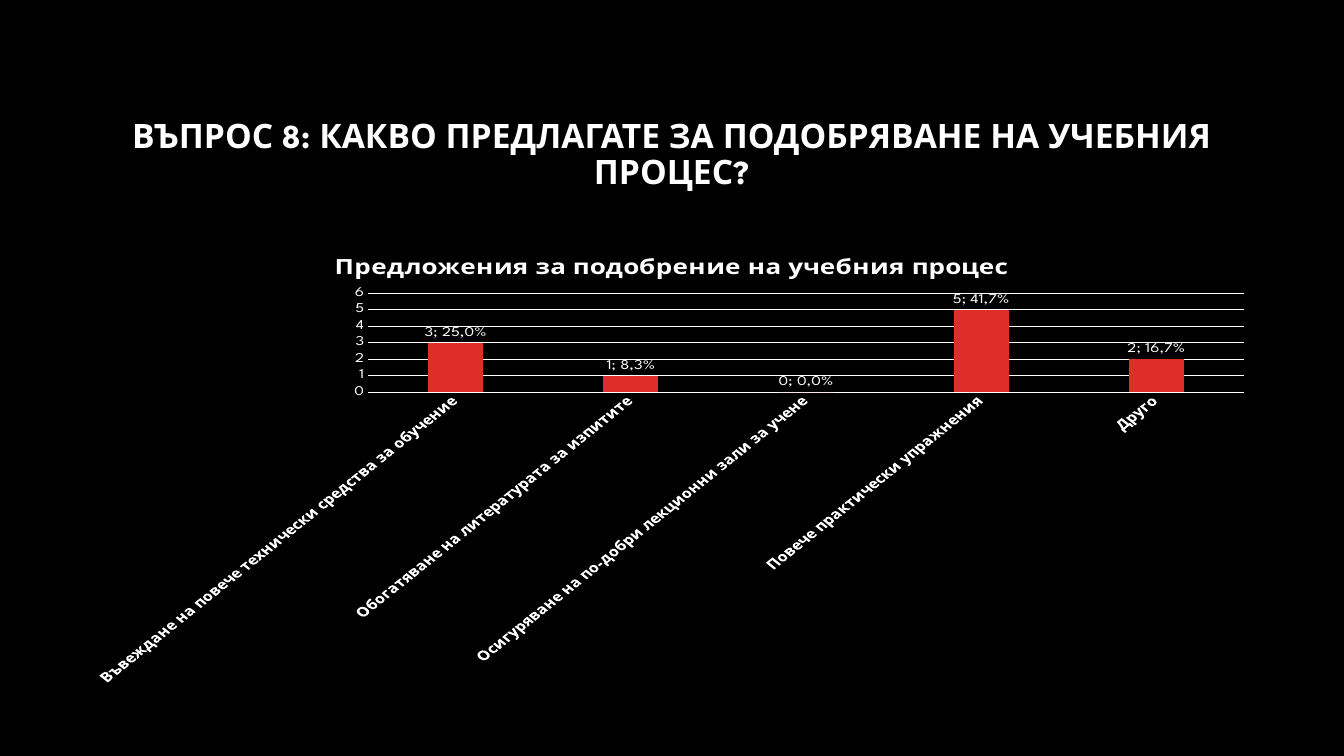
from dataclasses import dataclass

import pptx
import pptx.chart.data
import pptx.dml.color
import pptx.enum.chart
import pptx.enum.text
import pptx.util

Cm = pptx.util.Cm
Pt = pptx.util.Pt
RGB = pptx.dml.color.RGBColor


@dataclass(frozen=True)
class Theme:
    face: str = "League Spartan"
    background: RGB = RGB(0x00, 0x00, 0x00)
    ink: RGB = RGB(0xFF, 0xFF, 0xFF)
    bar: RGB = RGB(0xDF, 0x2E, 0x28)
    question_size: float = 24
    chart_title_size: float = 18.6
    axis_size: float = 12
    base_size: float = 10
    line_width: float = 0.75


THEME = Theme()
LEFT, WIDTH = Cm(1.9), Cm(30.05)

QUESTION = "ВЪПРОС 8: КАКВО ПРЕДЛАГАТЕ ЗА ПОДОБРЯВАНЕ НА УЧЕБНИЯ ПРОЦЕС?"
CHART_TITLE = "Предложения за подобрение на учебния процес"
# Proposal, number of answers, label above the bar
PROPOSALS = [
    ("Въвеждане на повече технически средства за обучение", 3, "3; 25,0%"),
    ("Обогатяване на литературата за изпитите", 1, "1; 8,3%"),
    ("Осигуряване на по-добри лекционни зали за учене", 0, "0; 0,0%"),
    ("Повече практически упражнения", 5, "5; 41,7%"),
    ("Друго", 2, "2; 16,7%"),
]


def style_font(font, size, bold=False):
    font.name = THEME.face
    font.size = Pt(size)
    font.bold = bold
    font.color.rgb = THEME.ink


def style_line(line):
    line.color.rgb = THEME.ink
    line.width = Pt(THEME.line_width)


def add_run(paragraph, text, size, bold=False):
    run = paragraph.add_run()
    run.text = text
    style_font(run.font, size, bold)


def fill_question(title):
    title.left, title.top, title.width, title.height = LEFT, Cm(2.13), WIDTH, Cm(3.58)
    frame = title.text_frame
    frame.word_wrap = True
    frame.auto_size = pptx.enum.text.MSO_AUTO_SIZE.NONE
    frame.vertical_anchor = pptx.enum.text.MSO_ANCHOR.MIDDLE
    paragraph = frame.paragraphs[0]
    paragraph.alignment = pptx.enum.text.PP_ALIGN.CENTER
    paragraph.line_spacing = 0.9
    add_run(paragraph, QUESTION, THEME.question_size, bold=True)


def style_axes(chart):
    for axis, bold in ((chart.category_axis, True), (chart.value_axis, False)):
        axis.major_tick_mark = pptx.enum.chart.XL_TICK_MARK.NONE
        axis.minor_tick_mark = pptx.enum.chart.XL_TICK_MARK.NONE
        style_font(axis.tick_labels.font, THEME.axis_size, bold)
    proposals, answers = chart.category_axis, chart.value_axis
    style_line(proposals.format.line)
    answers.format.line.fill.background()
    answers.has_major_gridlines = True
    style_line(answers.major_gridlines.format.line)
    # Automatic rotation slants the long proposal names
    body = proposals.tick_labels.font._element.getparent().getparent().getparent().bodyPr
    body.set("rot", "-60000000")
    body.set("vert", "horz")


def style_bars(plot):
    plot.gap_width = 219
    plot.overlap = -27
    plot.vary_by_categories = False
    bars = plot.series[0]
    bars.invert_if_negative = False
    bars.format.fill.solid()
    bars.format.fill.fore_color.rgb = THEME.bar
    outside_end = pptx.enum.chart.XL_LABEL_POSITION.OUTSIDE_END
    bars.data_labels.show_value = True
    bars.data_labels.position = outside_end
    style_font(bars.data_labels.font, THEME.axis_size)
    for index, (_, _, text) in enumerate(PROPOSALS):
        label = bars.points[index].data_label
        add_run(label.text_frame.paragraphs[0], text, THEME.axis_size)
        label.position = outside_end


def add_proposals_chart(slide):
    data = pptx.chart.data.CategoryChartData()
    data.categories = [proposal for proposal, _, _ in PROPOSALS]
    data.add_series(CHART_TITLE, [count for _, count, _ in PROPOSALS])
    chart = slide.shapes.add_chart(
        pptx.enum.chart.XL_CHART_TYPE.COLUMN_CLUSTERED,
        LEFT, Cm(6.1), WIDTH, Cm(11.18), data,
    ).chart
    style_font(chart.font, THEME.base_size)
    chart.has_legend = False
    chart.has_title = True
    chart.chart_title.include_in_layout = False
    heading = chart.chart_title.text_frame.paragraphs[0]
    add_run(heading, CHART_TITLE, THEME.chart_title_size, bold=True)
    style_axes(chart)
    style_bars(chart.plots[0])


def main():
    deck = pptx.Presentation()
    deck.slide_width, deck.slide_height = Cm(33.87), Cm(19.05)
    slide = deck.slides.add_slide(deck.slide_layouts[5])  # title only

    # Background
    slide.background.fill.solid()
    slide.background.fill.fore_color.rgb = THEME.background

    # Question and answers
    fill_question(slide.shapes.title)
    add_proposals_chart(slide)

    deck.save("out.pptx")


if __name__ == "__main__":
    main()
